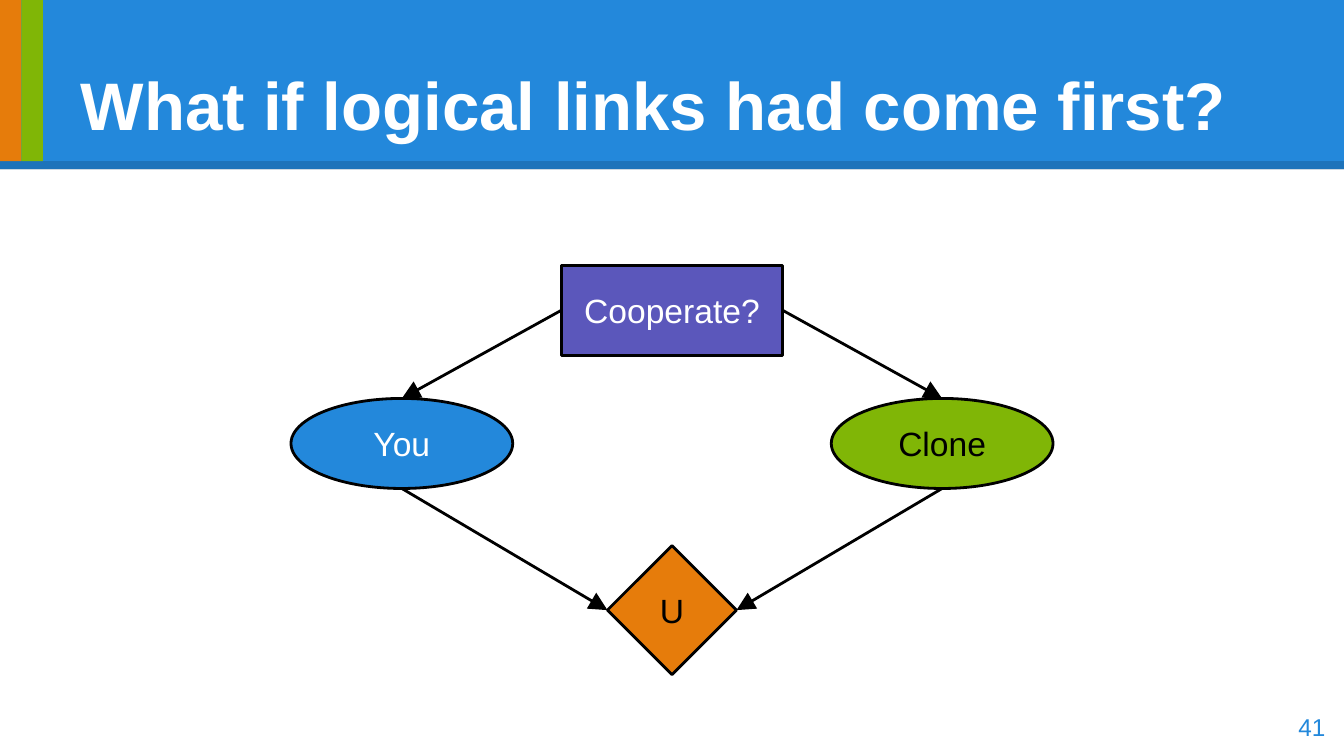
import pptx
import pptx.dml.color
import pptx.enum.shapes
import pptx.enum.text
import pptx.oxml
import pptx.oxml.ns
import pptx.util
from pptx.util import Inches

Shape = pptx.enum.shapes.MSO_SHAPE
Align = pptx.enum.text.PP_ALIGN
Anchor = pptx.enum.text.MSO_ANCHOR

BLUE, GREEN, ORANGE, PURPLE = "2388DB", "80B606", "E67C0B", "5B57BB"
BLACK, WHITE = "000000", "FFFFFF"


def color(hex_string):
    return pptx.dml.color.RGBColor.from_string(hex_string)


def drawing_element(tag, **attributes):
    element = pptx.oxml.parse_xml(f"<a:{tag} {pptx.oxml.ns.nsdecls('a')}/>")
    for name, value in attributes.items():
        element.set(name, value)
    return element


def write(shape, text, size=18, font_color=BLACK, bold=False,
          align=Align.CENTER, anchor=Anchor.MIDDLE):
    frame = shape.text_frame
    frame.word_wrap = True
    frame.auto_size = pptx.enum.text.MSO_AUTO_SIZE.NONE
    frame.vertical_anchor = anchor
    frame.margin_left = frame.margin_right = Inches(0.1)
    frame.margin_top = frame.margin_bottom = Inches(0.1)
    paragraph = frame.paragraphs[0]
    paragraph.alignment = align
    run = paragraph.add_run()
    run.text = text
    run.font.name = "Arial"
    run.font.size = pptx.util.Pt(size)
    run.font.bold = bold
    run.font.color.rgb = color(font_color)


class SlideBuilder:
    """Holds the current slide and its line style."""

    line_width = 1.5

    def __init__(self, presentation):
        layout = presentation.slide_layouts.get_by_name("Title Only")
        self.slide = presentation.slides.add_slide(layout)

    def title(self, text, left, top, width, height):
        title = self.slide.shapes.title
        # Bring the title in front of the header band.
        title.element.getparent().append(title.element)
        title.left, title.top = Inches(left), Inches(top)
        title.width, title.height = Inches(width), Inches(height)
        write(title, text, size=36, font_color=WHITE, bold=True,
              align=Align.LEFT, anchor=Anchor.BOTTOM)

    def block(self, left, top, width, height, fill, kind=Shape.RECTANGLE):
        shape = self.slide.shapes.add_shape(
            kind, Inches(left), Inches(top), Inches(width), Inches(height))
        shape.shadow.inherit = False
        shape.fill.solid()
        shape.fill.fore_color.rgb = color(fill)
        shape.line.fill.background()
        return shape

    def node(self, text, kind, center, size, fill, font_color):
        (x, y), (width, height) = center, size
        shape = self.block(x - width / 2, y - height / 2, width, height, fill, kind)
        shape.line.color.rgb = color(BLACK)
        shape.line.width = pptx.util.Pt(self.line_width)
        write(shape, text, font_color=font_color)

    def line(self, start, end, width=line_width):
        connector = self.slide.shapes.add_connector(
            pptx.enum.shapes.MSO_CONNECTOR.STRAIGHT,
            *map(Inches, start), *map(Inches, end))
        connector.line.color.rgb = color(BLACK)
        connector.line.width = pptx.util.Pt(width)
        connector.element.spPr.append(drawing_element("effectLst"))
        return connector

    def arrow(self, start, end):
        connector = self.line(start, end)
        outline = connector.element.spPr.find(pptx.oxml.ns.qn("a:ln"))
        outline.append(drawing_element("tailEnd", type="triangle", w="lg", len="lg"))

    def rule(self, start, end, width, opacity):
        connector = self.line(start, end, width)
        fill = next(connector.element.iter(pptx.oxml.ns.qn("a:srgbClr")))
        fill.append(drawing_element("alpha", val=str(opacity * 1000)))

    def page_number(self, text, left, top, width, height):
        box = self.slide.shapes.add_textbox(
            Inches(left), Inches(top), Inches(width), Inches(height))
        write(box, text, size=13, font_color=BLUE, align=Align.RIGHT)


def main():
    presentation = pptx.Presentation()
    presentation.slide_width = Inches(10)
    presentation.slide_height = Inches(10 * 9 / 16)
    builder = SlideBuilder(presentation)

    builder.block(0, 0, 10, 1.26, BLUE)
    builder.rule((0, 1.23), (10, 1.23), width=4.5, opacity=15)
    builder.title("What if logical links had come first?", 0.5, 0.23, 9, 0.94)
    for index, fill in enumerate((ORANGE, GREEN)):
        builder.block(index * 0.16, 0, 0.16, 1.2, fill)

    middle, spread = 5, 2.01
    question_y, player_y, outcome_y = 2.31, 3.3, 4.54
    width, height = box = (1.65, 0.67)
    diamond = 0.96

    players = (("You", -1, BLUE, WHITE), ("Clone", 1, GREEN, BLACK))
    for name, side, fill, font_color in players:
        x = middle + side * spread
        builder.arrow((middle + side * width / 2, question_y),
                      (x, player_y - height / 2))
        builder.arrow((x, player_y + height / 2),
                      (middle + side * diamond / 2, outcome_y))
        builder.node(name, Shape.OVAL, (x, player_y), box, fill, font_color)
    builder.node("Cooperate?", Shape.RECTANGLE, (middle, question_y), box,
                 PURPLE, WHITE)
    builder.node("U", Shape.DIAMOND, (middle, outcome_y), (diamond, diamond),
                 ORANGE, BLACK)

    builder.page_number("41", 9.36, 5.19, 0.6, 0.43)
    presentation.save("out.pptx")


if __name__ == "__main__":
    main()
